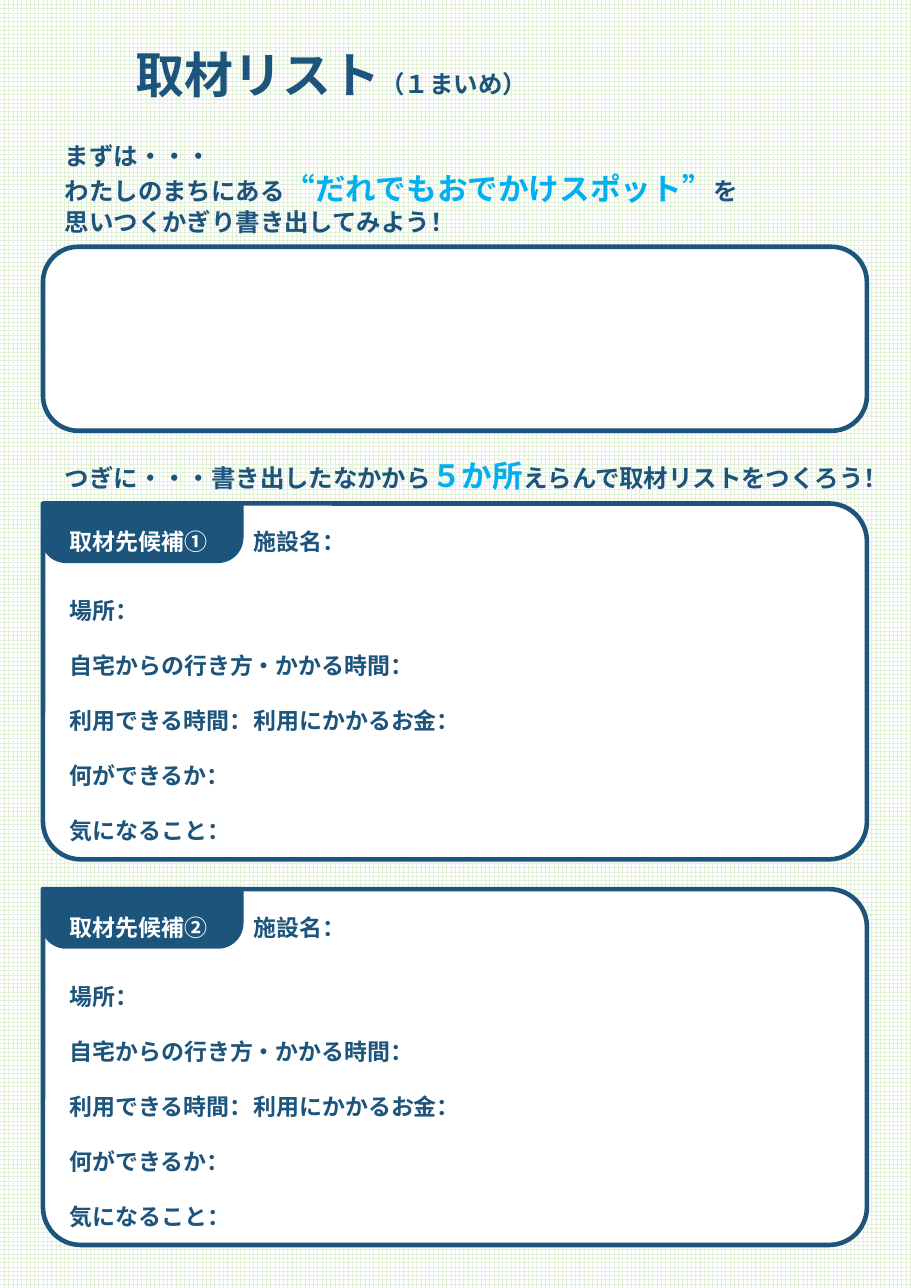
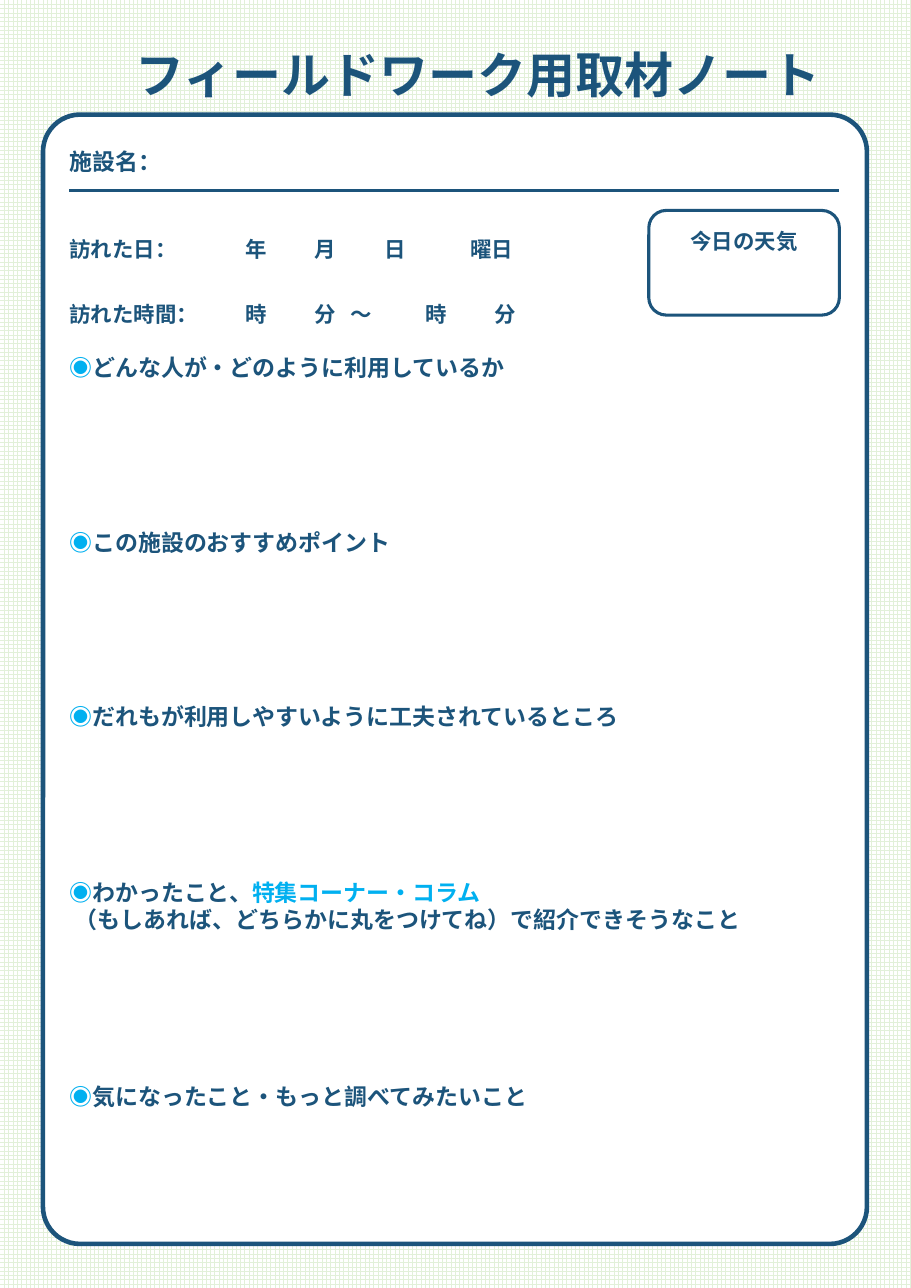
"""Build a two-page worksheet for planning and recording fieldwork visits."""
from lxml.etree import SubElement
from pptx import Presentation
from pptx.dml.color import RGBColor
from pptx.enum.dml import MSO_PATTERN
from pptx.enum.shapes import MSO_CONNECTOR, MSO_SHAPE
from pptx.enum.text import MSO_ANCHOR, MSO_AUTO_SIZE, PP_ALIGN
from pptx.oxml.ns import qn
from pptx.util import Inches, Pt

COLORS = {"navy": "1C547B", "sky": "00B0F0", "white": "FFFFFF", "grid": "E2F0D9"}
RGB = {name: RGBColor.from_string(value) for name, value in COLORS.items()}
FONT = "Noto Sans CJK JP"
CARD_LEFT, CARD_WIDTH = 0.39, 7.48
TEXT_LEFT = 0.63


def write(frame, lines, spacing=1, tabs=(), align=PP_ALIGN.LEFT):
    """Fill a text frame with lines made of (text, size, colour) runs."""
    frame.margin_left = frame.margin_right = frame.margin_top = frame.margin_bottom = 0
    frame.auto_size = MSO_AUTO_SIZE.NONE
    frame.word_wrap = True
    frame.vertical_anchor = MSO_ANCHOR.TOP
    for number, runs in enumerate(lines):
        paragraph = frame.add_paragraph() if number else frame.paragraphs[0]
        paragraph.alignment = align
        paragraph.line_spacing = spacing
        if tabs:
            stops = SubElement(paragraph._p.get_or_add_pPr(), qn("a:tabLst"))
            for stop in tabs:
                SubElement(stops, qn("a:tab"), pos=str(Inches(stop)), algn="l")
        for text, size, color in runs:
            run = paragraph.add_run()
            run.text = text
            run.font.size = Pt(size)
            run.font.bold = True
            run.font.color.rgb = RGB[color]
            run.font.name = FONT
            SubElement(run.font._element, qn("a:ea"), typeface=FONT)
    return frame


def panel(slide, kind, box, adjustments, fill="white", width=3):
    """Add a navy-outlined shape with the given corner adjustments."""
    shape = slide.shapes.add_shape(kind, *map(Inches, box))
    for index, value in enumerate(adjustments):
        shape.adjustments[index] = value
    shape.shadow.inherit = False
    if fill:
        shape.fill.solid()
        shape.fill.fore_color.rgb = RGB[fill]
    else:
        shape.fill.background()
    shape.line.color.rgb = RGB["navy"]
    shape.line.width = Pt(width)
    return shape


prs = Presentation()
prs.slide_width, prs.slide_height = Inches(8.27), Inches(11.69)
paper = prs.slide_master.background.fill
paper.patterned()
paper.pattern = MSO_PATTERN.LARGE_GRID
paper.fore_color.rgb = RGB["grid"]
paper.back_color.rgb = RGB["white"]

titles = [
    [("取材リスト", 32, "navy"), ("（１まいめ）", 16, "navy")],
    [("フィールドワーク用取材ノート", 32, "navy")],
]
pages = []
for title_runs in titles:
    page = prs.slides.add_slide(prs.slide_layouts[5])
    title = page.shapes.title
    title.left, title.top = Inches(1.23), Inches(0.4)
    title.width, title.height = Inches(6.77), Inches(0.71)
    write(title.text_frame, [title_runs])
    pages.append(page)
list_page, note_page = pages

panel(list_page, MSO_SHAPE.ROUNDED_RECTANGLE, (CARD_LEFT, 2.24, CARD_WIDTH, 1.67), [0.191])
steps = [
    (1.28, 0.87, [
        [("まずは・・・", 16, "navy")],
        [("わたしのまちにある", 16, "navy"),
         ("“だれでもおでかけスポット”", 20, "sky"), ("を", 16, "navy")],
        [("思いつくかぎり書き出してみよう！", 16, "navy")],
    ]),
    (4.15, 0.34, [
        [("つぎに・・・書き出したなかから", 16, "navy"), ("５か所", 20, "sky"),
         ("えらんで取材リストをつくろう！", 16, "navy")],
    ]),
]
for top, height, lines in steps:
    step = list_page.shapes.add_textbox(Inches(0.59), Inches(top), Inches(7.6), Inches(height))
    write(step.text_frame, lines)

questions = [
    "場所：",
    "自宅からの行き方・かかる時間：",
    "利用できる時間：\t利用にかかるお金：",
    "何ができるか：",
    "気になること：",
]
for top, mark in ((4.57, "①"), (8.07, "②")):
    panel(list_page, MSO_SHAPE.ROUNDED_RECTANGLE, (CARD_LEFT, top, CARD_WIDTH, 3.23), [0.106])
    panel(list_page, MSO_SHAPE.ROUND_2_SAME_RECTANGLE, (CARD_LEFT, top, 1.8, 0.52),
          [0, 0.405], "navy")
    form = list_page.shapes.add_textbox(
        Inches(TEXT_LEFT), Inches(top - 0.03), Inches(6.99), Inches(3.19))
    heading = [("取材先候補" + mark, 15, "white"), ("\t施設名：", 15, "navy")]
    rows = [[(question, 15, "navy")] for question in questions]
    write(form.text_frame, [heading] + rows, 2, (1.67, 3.12))
    form.text_frame.paragraphs[1].line_spacing = 2.5

panel(note_page, MSO_SHAPE.ROUNDED_RECTANGLE, (CARD_LEFT, 1.04, CARD_WIDTH, 10.25), [0.045])
facility = note_page.shapes.add_textbox(
    Inches(TEXT_LEFT), Inches(1.09), Inches(0.97), Inches(0.54))
write(facility.text_frame, [[("施設名：", 15, "navy")]], 2)

rule = note_page.shapes.add_connector(
    MSO_CONNECTOR.STRAIGHT, Inches(TEXT_LEFT), Inches(1.73), Inches(7.62), Inches(1.73))
rule.line.color.rgb = RGB["navy"]
rule.line.width = Pt(2)
SubElement(rule._element.spPr, qn("a:effectLst"))

visit = note_page.shapes.add_textbox(Inches(TEXT_LEFT), Inches(1.79), Inches(5), Inches(1.04))
write(visit.text_frame, [[("訪れた日：\t年\t月\t日\t曜日", 14, "navy")]], 2.5,
      (1.6, 2.23, 2.86, 3.64))
hours = note_page.shapes.add_textbox(Inches(TEXT_LEFT), Inches(2.38), Inches(5), Inches(0.59))
write(hours.text_frame, [[("訪れた時間：\t時\t分\t〜\t時\t分", 14, "navy")]], 2.5,
      (1.6, 2.23, 2.55, 3.23, 3.86))

weather = panel(note_page, MSO_SHAPE.ROUNDED_RECTANGLE, (5.89, 1.91, 1.73, 0.95),
                [0.167], None, 2)
write(weather.text_frame, [[("今日の天気", 14, "navy")]], 1.5, align=PP_ALIGN.CENTER)

topics = [
    (3.21, [("どんな人が・どのように利用しているか", 15, "navy")]),
    (4.8, [("この施設のおすすめポイント", 15, "navy")]),
    (6.38, [("だれもが利用しやすいように工夫されているところ", 15, "navy")]),
    (7.97, [("わかったこと、", 15, "navy"), ("特集コーナー・コラム", 15, "sky")]),
    (9.83, [("気になったこと・もっと調べてみたいこと", 15, "navy")]),
]
for top, topic_runs in topics:
    topic = note_page.shapes.add_textbox(
        Inches(TEXT_LEFT), Inches(top), Inches(7), Inches(0.32))
    lines = [[("◉", 15, "sky")] + topic_runs]
    if top == 7.97:
        topic.height = Inches(0.5)
        lines.append([("（もしあれば、どちらかに丸をつけてね）で紹介できそうなこと", 15, "navy")])
    write(topic.text_frame, lines)
    for hint in topic.text_frame.paragraphs[1:]:
        hint._p.get_or_add_pPr().set("marL", str(Inches(0.05)))

prs.save("out.pptx")
